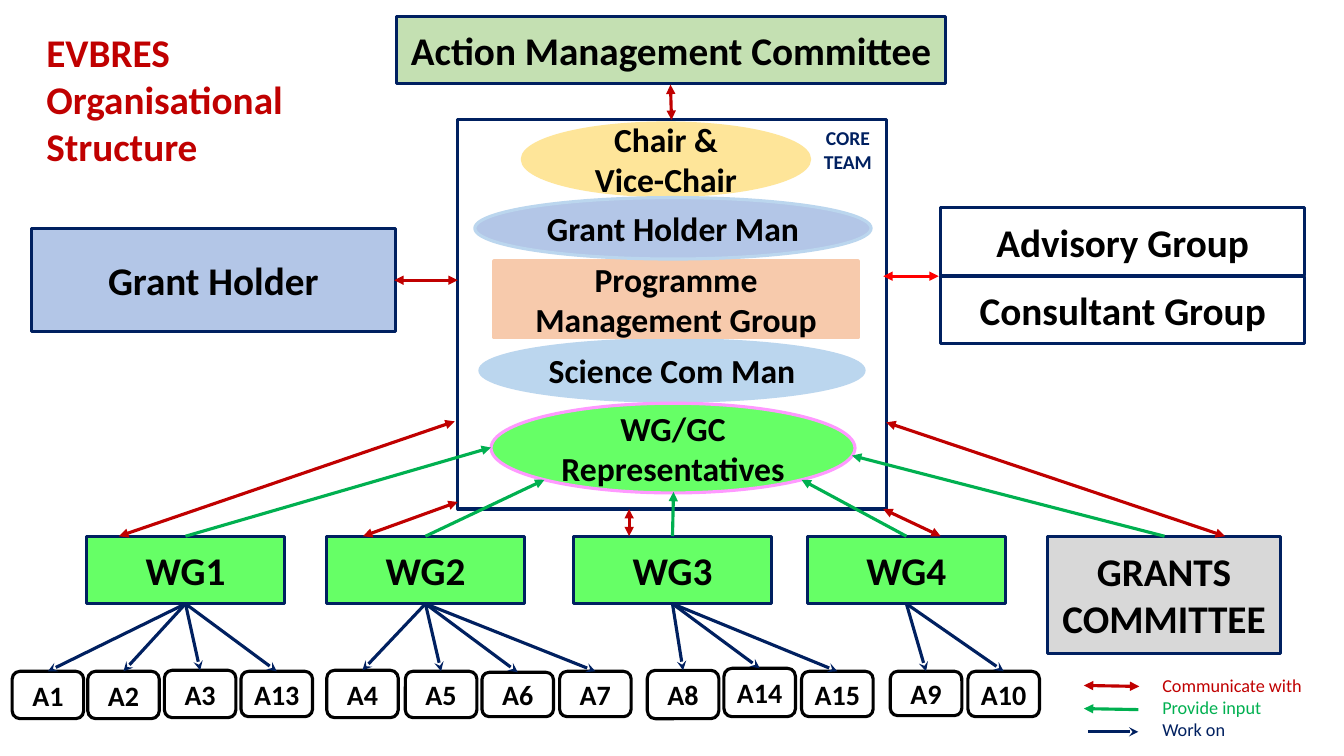
from lxml import etree
from pptx import Presentation
from pptx import util as u
from pptx.dml.color import RGBColor
from pptx.enum import shapes, text
from pptx.oxml.ns import qn

PX = 9144  # 100 px to the inch
FONT = "Calibri"
NAVY, RED, GREEN, BLACK, WHITE = "002060", "C00000", "00B050", "000000", "FFFFFF"
LIME, LAVENDER, SKY = "66FF66", "B3C6E7", "BBD6EE"
RECT = shapes.MSO_SHAPE.RECTANGLE
OVAL = shapes.MSO_SHAPE.OVAL
ROUNDED = shapes.MSO_SHAPE.FLOWCHART_ALTERNATE_PROCESS

TITLE = ("EVBRES Organisational Structure", (36, 23, 305, 101))
CORE_LABEL = ("CORE TEAM", (801, 120, 80, 54))
CORE_FRAME = (454, 119, 425, 386)

# lines of text, (left, top, width, height), fill
BODIES = [
    (["Action Management Committee"], (393, 16, 545, 67), "C4E0B2"),
    (["Grant Holder"], (31, 227, 361, 102), LAVENDER),
    (["Advisory Group"], (933, 206, 361, 67), WHITE),
    (["Consultant Group"], (933, 274, 361, 67), WHITE),
    (["GRANTS", "COMMITTEE"], (1039, 532, 231, 116), "D8D8D8"),
]

# shape, lines of text, (left, top, width, height), fill, outline
CORE_TEAM = [
    (OVAL, ["Chair &", "Vice-Chair"], (518, 122, 285, 72), "FEE599", "FEE599"),
    (OVAL, ["Science Com Man"], (476, 337, 381, 61), SKY, SKY),
    (RECT, ["Programme Management Group"], (490, 259, 361, 76), "F7CAAC", "F7CAAC"),
    (OVAL, ["WG/GC Representatives"], (487, 400, 361, 89), LIME, "FF99FF"),
    (OVAL, ["Grant Holder Man"], (471, 196, 393, 61), LAVENDER, SKY),
]

# name, left, activities as (name, left, top, height)
GROUP_TOP, GROUP_WIDTH, GROUP_HEIGHT = 532, 196, 67
ACTIVITY_WIDTH = 71
WORKING_GROUPS = [
    ("WG1", 86, [("A1", 12, 666, 47), ("A2", 87, 666, 47),
                 ("A3", 163, 665, 47), ("A13", 239, 666, 45)]),
    ("WG2", 324, [("A4", 324, 665, 47), ("A5", 402, 666, 46),
                  ("A6", 478, 667, 44), ("A7", 555, 666, 45)]),
    ("WG3", 569, [("A8", 642, 665, 48), ("A14", 718, 663, 48), ("A15", 795, 666, 45)]),
    ("WG4", 801, [("A9", 883, 666, 44), ("A10", 960, 666, 45)]),
]

# from x, from y, to x, to y, colour
COMMUNICATION = [
    (931, 274, 876, 274, "FF0000"),
    (454, 278, 391, 278, RED),
    (665, 84, 666, 119, RED),
    (118, 532, 451, 418, RED),
    (360, 532, 454, 498, RED),
    (624, 532, 624, 505, RED),
    (876, 505, 933, 532, RED),
    (879, 419, 1215, 532, RED),
]
INPUT = [
    (184, 532, 487, 444),
    (422, 532, 540, 476),
    (667, 532, 668, 488),
    (899, 532, 795, 476),
    (1155, 532, 845, 452),
]

LEGEND_BOX = (1143, 664, 164, 76)
# label, colour, arrow ends, head, tail
LEGEND = [
    ("Communicate with", RED, (1130, 681, 1075, 680), "triangle", "triangle"),
    ("Provide input", GREEN, (1129, 704, 1075, 703), None, "triangle"),
    ("Work on", NAVY, (1079, 726, 1129, 726), None, "stealth"),
]


def emu(lengths):
    return [length * PX for length in lengths]


def rgb(value):
    return RGBColor.from_string(value)


def write(shape, lines, size, colors, bold=True, align=text.PP_ALIGN.CENTER,
          anchor=text.MSO_ANCHOR.MIDDLE):
    """Fill the shape with one paragraph per line, each with its own colour."""
    frame = shape.text_frame
    frame.text = "\n".join(lines)
    frame.word_wrap = True
    frame.auto_size = text.MSO_AUTO_SIZE.NONE
    frame.vertical_anchor = anchor
    for paragraph, color in zip(frame.paragraphs, colors):
        paragraph.alignment = align
        paragraph.font.name = FONT
        paragraph.font.size = u.Pt(size)
        paragraph.font.bold = bold
        paragraph.font.color.rgb = rgb(color)


def add_box(slide, kind, place, fill, outline, lines=(), size=28):
    shape = slide.shapes.add_shape(kind, *emu(place))
    shape.shadow.inherit = False
    if fill:
        shape.fill.solid()
        shape.fill.fore_color.rgb = rgb(fill)
    else:
        shape.fill.background()
    shape.line.color.rgb = rgb(outline)
    shape.line.width = u.Pt(2.25)
    if lines:
        write(shape, lines, size, [BLACK] * len(lines))
    return shape


def add_arrow(slide, ends, color, head=None, tail="triangle"):
    arrow = slide.shapes.add_connector(shapes.MSO_CONNECTOR.STRAIGHT, *emu(ends))
    arrow.line.color.rgb = rgb(color)
    arrow.line.width = u.Pt(2.25)
    properties = arrow._element.spPr
    outline = properties.find(qn("a:ln"))
    for tag, tip in (("a:headEnd", head), ("a:tailEnd", tail)):
        if tip:
            etree.SubElement(outline, qn(tag), type=tip)
    etree.SubElement(properties, qn("a:effectLst"))
    return arrow


def add_working_group(slide, name, left, activities):
    place = (left, GROUP_TOP, GROUP_WIDTH, GROUP_HEIGHT)
    group = add_box(slide, RECT, place, LIME, NAVY, [name])
    for label, activity_left, top, height in activities:
        place = (activity_left, top, ACTIVITY_WIDTH, height)
        activity = add_box(slide, ROUNDED, place, WHITE, BLACK, [label], 20)
        arrow = add_arrow(slide, (0, 0, 0, 0), NAVY, tail="stealth")
        arrow.begin_connect(group, 2)  # bottom
        arrow.end_connect(activity, 0)  # top


def main():
    presentation = Presentation()
    presentation.slide_width, presentation.slide_height = emu((1333, 750))
    slide = presentation.slides.add_slide(presentation.slide_layouts[5])

    words, place = TITLE
    title = slide.shapes.title
    title.left, title.top, title.width, title.height = emu(place)
    write(title, [words], 28, [RED], align=text.PP_ALIGN.LEFT,
          anchor=text.MSO_ANCHOR.TOP)

    for lines, place, fill in BODIES:
        add_box(slide, RECT, place, fill, NAVY, lines)
    for kind, lines, place, fill, outline in CORE_TEAM:
        add_box(slide, kind, place, fill, outline, lines, 24)
    add_box(slide, RECT, CORE_FRAME, None, NAVY)
    words, place = CORE_LABEL
    write(slide.shapes.add_textbox(*emu(place)), [words], 14, [NAVY],
          anchor=text.MSO_ANCHOR.TOP)

    for name, left, activities in WORKING_GROUPS:
        add_working_group(slide, name, left, activities)
    for ends in INPUT:
        add_arrow(slide, ends, GREEN)
    for *ends, color in COMMUNICATION:
        add_arrow(slide, ends, color, head="triangle")

    labels, colors = zip(*(entry[:2] for entry in LEGEND))
    write(slide.shapes.add_textbox(*emu(LEGEND_BOX)), labels, 13, colors, bold=False,
          align=text.PP_ALIGN.LEFT, anchor=text.MSO_ANCHOR.TOP)
    for _, color, ends, head, tail in LEGEND:
        add_arrow(slide, ends, color, head, tail)

    presentation.save("out.pptx")


if __name__ == "__main__":
    main()
